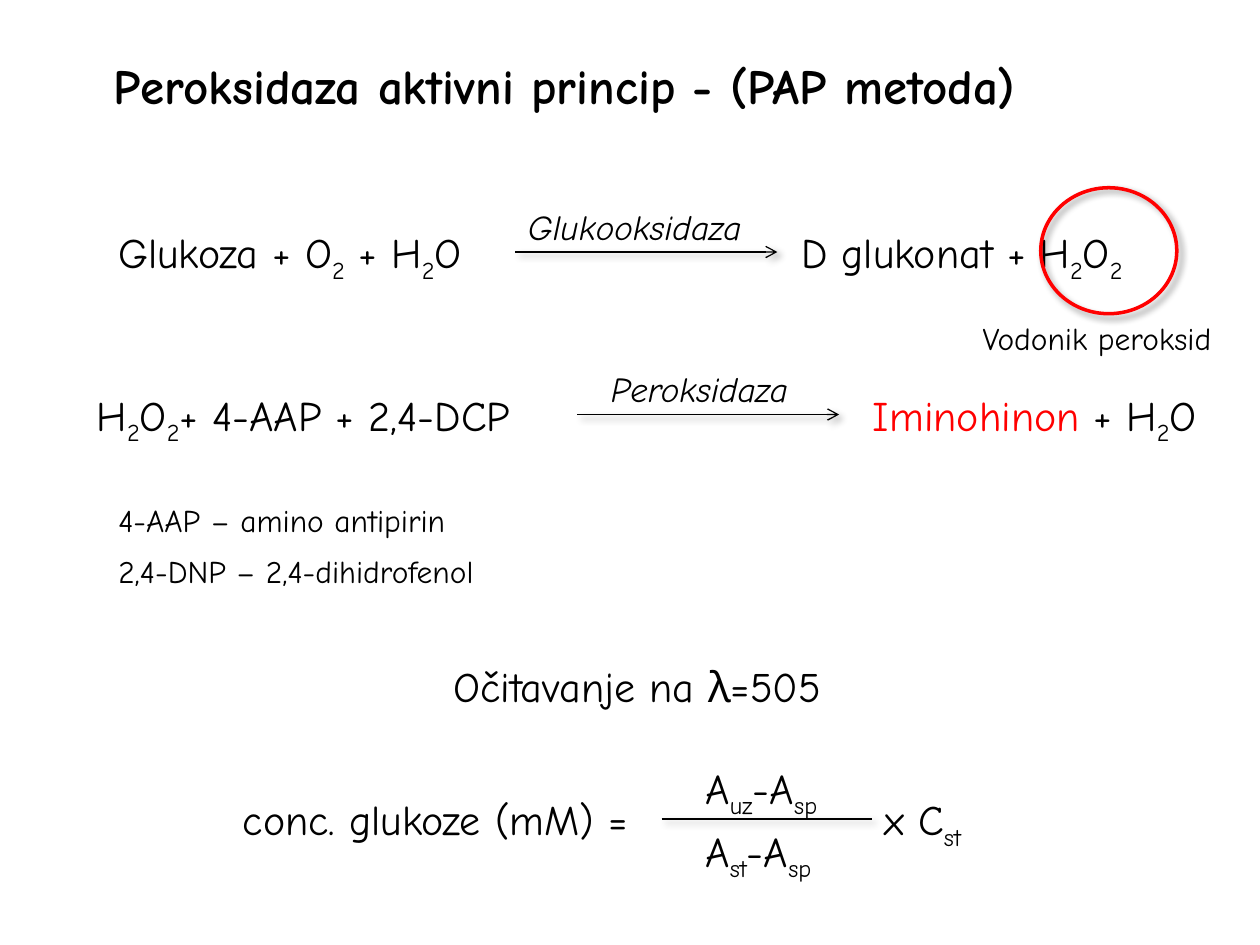
from lxml.etree import SubElement
from pptx import Presentation
from pptx.dml.color import RGBColor
from pptx.enum.shapes import MSO_CONNECTOR, MSO_SHAPE
from pptx.enum.text import MSO_ANCHOR, MSO_AUTO_SIZE, PP_ALIGN
from pptx.oxml.ns import qn
from pptx.util import Pt

PX = 9144  # 100 px to the inch
FONT = "Comic Neue"
BLACK = "000000"
RED = "FF0000"


def px(*sizes):
    return [size * PX for size in sizes]


def rgb(code):
    return RGBColor.from_string(code)


def style(font, size, color=BLACK):
    font.name = FONT
    font.size = Pt(size)
    font.color.rgb = rgb(color)


def label(slide, x, y, w, h, text, size=24, lead=BLACK, wrap=True, italic=None):
    """Add text in which _marks_ enclose subscripts; lead colours the part before a |."""
    frame = slide.shapes.add_textbox(*px(x, y, w, h)).text_frame
    frame.word_wrap = wrap
    frame.auto_size = MSO_AUTO_SIZE.SHAPE_TO_FIT_TEXT
    line = frame.paragraphs[0]
    first, bar, rest = text.partition("|")
    parts = [(first, lead), (rest, BLACK)] if bar else [(first, BLACK)]
    for words, color in parts:
        for i, piece in enumerate(words.split("_")):
            if piece:
                run = line.add_run()
                run.text = piece
                style(run.font, size, color)
                run.font.italic = italic
                if i % 2:
                    run.font._element.set("baseline", "-25000")


def shade(shape):
    effects = SubElement(shape._element.spPr, qn("a:effectLst"))
    outer = SubElement(effects, qn("a:outerShdw"), blurRad=str(Pt(4)),
                       dist=str(Pt(3)), dir="2700000", rotWithShape="0")
    color = SubElement(outer, qn("a:srgbClr"), val=BLACK)
    SubElement(color, qn("a:alpha"), val="40000")


def rule(slide, x, y, w, arrow=False):
    line = slide.shapes.add_connector(MSO_CONNECTOR.STRAIGHT, *px(x, y, x + w, y))
    line.line.color.rgb = rgb(BLACK)
    line.line.width = Pt(0.75)
    if arrow:
        SubElement(line._element.spPr.find(qn("a:ln")), qn("a:tailEnd"), type="arrow")
    shade(line)


def title(slide, x, y, w, h, text):
    shape = slide.shapes.title
    shape.left, shape.top, shape.width, shape.height = px(x, y, w, h)
    frame = shape.text_frame
    frame.text = text
    frame.word_wrap = True
    frame.auto_size = MSO_AUTO_SIZE.SHAPE_TO_FIT_TEXT
    frame.vertical_anchor = MSO_ANCHOR.TOP
    line = frame.paragraphs[0]
    line.alignment = PP_ALIGN.LEFT
    font = line.runs[0].font
    style(font, 28)
    font.bold = True


def reaction(slide, x, y, left, enzyme, right):
    """Each side is (offset, width, text); the arrow spans the enzyme's row."""
    for dx, w, text in (left, right):
        label(slide, x + dx, y + 17, w, 51, text, lead=RED)
    start, dx, w, name = enzyme
    rule(slide, x + start, y + 42, 208, arrow=True)
    label(slide, x + dx, y, w, 44, name, 20, italic=True)


def ring(slide, x, y, w, h):
    shape = slide.shapes.add_shape(MSO_SHAPE.OVAL, *px(x, y, w, h))
    shape.fill.background()
    shape.line.color.rgb = rgb(RED)
    shape.line.width = Pt(2)
    shade(shape)


def legend(slide, x, y, w, lines):
    for i, text in enumerate(lines):
        label(slide, x, y + 40 * i, w, 40, text, 18, wrap=False)


def formula(slide, x, y, name, top, bottom, factor):
    label(slide, x, y + 25, 342, 51, name)
    rule(slide, x + 342, y + 50, 167)
    for i, text in enumerate((top, bottom)):
        label(slide, x + 367, y + 50 * i, 142, 51, text)
    label(slide, x + 509, y + 25, 100, 51, factor)


def main():
    deck = Presentation()
    deck.slide_width, deck.slide_height = px(1000, 750)
    slide = deck.slides.add_slide(deck.slide_layouts[5])
    title(slide, 80, 39, 867, 57, "Peroksidaza aktivni princip - (PAP metoda)")
    reaction(slide, 84, 158, (0, 333, "Glukoza + O_2_ + H_2_O"),
             (325, 325, 208, "Glukooksidaza"), (542, 308, "D glukonat + H_2_O_2_"))
    ring(slide, 826, 149, 108, 100)
    legend(slide, 770, 248, 220, ["Vodonik peroksid"])
    reaction(slide, 67, 287, (0, 392, "H_2_O_2_+ 4-AAP + 2,4-DCP"),
             (391, 408, 183, "Peroksidaza"), (616, 308, "Iminohinon| + H_2_O"))
    legend(slide, 84, 393, 339,
           ["4-AAP – amino antipirin", "2,4-DNP – 2,4-dihidrofenol"])
    label(slide, 350, 519, 350, 51, "Očitavanje na λ=505")
    formula(slide, 183, 600, "conc. glukoze (mM) =",
            "A_uz_-A_sp_", "A_st_-A_sp_", "x C_st_")
    deck.save("out.pptx")


if __name__ == "__main__":
    main()
